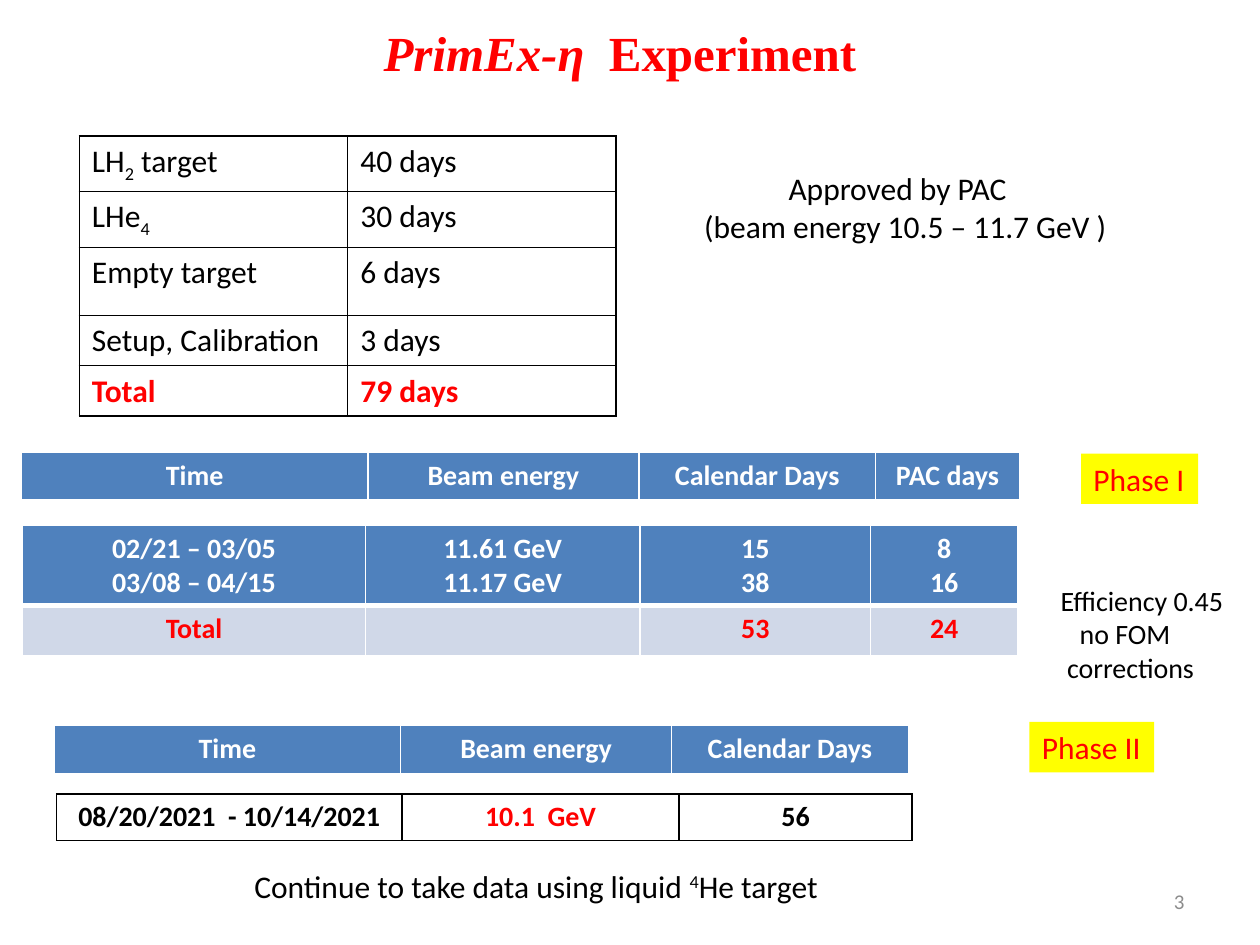
"""Build the experiment run schedule slide."""
from lxml.etree import SubElement as Sub
from pptx import Presentation
from pptx.dml.color import RGBColor
from pptx.enum.text import MSO_ANCHOR as Anchor, PP_ALIGN as Align
from pptx.oxml.ns import qn
from pptx.util import Inches, Pt

rgb = RGBColor.from_string
RED, BLACK, WHITE, BLUE = "FF0000", "000000", "FFFFFF", "4F81BD"
BASES = {"_": "-25000", "^": "30000"}


def write(frame, lines, size, color, bold=False, align=Align.LEFT, face="Calibri"):
    for i, line in enumerate(lines):
        para = frame.paragraphs[0] if i == 0 else frame.add_paragraph()
        para.alignment = align
        for piece in line:
            run = para.add_run()
            run.text = piece.lstrip("_^")
            font = run.font
            font.name, font.size, font.bold = face, Pt(size), bold
            font.color.rgb = rgb(color)
            if piece[:1] in BASES:
                run._r.get_or_add_rPr().set("baseline", BASES[piece[0]])


def grid(left, top, cols, rows, cells, size, edge, align=Align.CENTER):
    frame = slide.shapes.add_table(
        len(rows), len(cols), Inches(left), Inches(top), Inches(sum(cols)), Inches(sum(rows)))
    table = frame.table
    table.first_row = table.horz_banding = False
    for col, width in zip(table.columns, cols):
        col.width = Inches(width)
    for r, (row, (fill, texts)) in enumerate(zip(rows, cells)):
        table.rows[r].height = Inches(row)
        for c, (lines, color, bold) in enumerate(texts):
            cell = table.cell(r, c)
            write(cell.text_frame, lines, size, color, bold, align)
            thick = 3 if edge == WHITE else 1
            sides = {"L": 1, "R": 1, "T": thick if r else 1, "B": 1 if r else thick}
            props = cell._tc.get_or_add_tcPr()
            for side, width in sides.items():
                line = Sub(props, qn("a:ln" + side), w=str(Pt(width)))
                Sub(Sub(line, qn("a:solidFill")), qn("a:srgbClr"), val=edge)
            if fill:
                cell.fill.solid()
                cell.fill.fore_color.rgb = rgb(fill)
            else:
                cell.fill.background()


deck = Presentation()
deck.slide_width, deck.slide_height = Inches(10), Inches(7.5)
slide = deck.slides.add_slide(deck.slide_layouts[6])

title = slide.shapes.add_textbox(Inches(0.67), Inches(0.04), Inches(8.5), Inches(0.75)).text_frame
title.word_wrap = True
title.vertical_anchor = Anchor.MIDDLE
write(title, [["PrimEx-η ", " Experiment"]], 28, RED, True, Align.CENTER, "Times New Roman")
title.paragraphs[0].runs[0].font.italic = True

page = slide.shapes.add_textbox(Inches(7.17), Inches(6.95), Inches(2.33), Inches(0.4)).text_frame
page.word_wrap = True
page.vertical_anchor = Anchor.MIDDLE
write(page, [["3"]], 12, "8C8C8C", align=Align.RIGHT)

plan = [
    (["LH", "_2", " target"], "40 days"),
    (["LHe", "_4"], "30 days"),
    (["Empty target"], "6 days"),
    (["Setup, Calibration"], "3 days"),
    (["Total"], "79 days"),
]
cells = []
for name, days in plan:
    last = name == ["Total"]
    color = RED if last else BLACK
    cells.append((None, [([name], color, last), ([[days]], color, last)]))
grid(0.63, 1.08, [2.13, 2.13], [0.44, 0.44, 0.54, 0.4, 0.4], cells, 18, BLACK, Align.LEFT)

heads = [([[text]], WHITE, True) for text in ("Time", "Beam energy", "Calendar Days", "PAC days")]
widths = [2.75, 2.15, 1.88, 1.14]
for left, top, count in ((0.17, 3.59, 4), (0.43, 5.76, 3)):
    grid(left, top, widths[:count], [0.39], [(BLUE, heads[:count])], 16, WHITE)

runs = [("02/21 – 03/05", "03/08 – 04/15"), ("11.61 GeV", "11.17 GeV"), ("15", "38"), ("8", "16")]
body = [([[one], [two]], WHITE, True) for one, two in runs]
total = [([[text]], RED, True) for text in ("Total", "", "53", "24")]
grid(0.18, 4.17, [2.72, 2.18, 1.83, 1.17], [0.63, 0.39], [(BLUE, body), ("D0D8E8", total)], 16, WHITE)

second = [("08/20/2021  - 10/14/2021", BLACK), ("10.1  GeV", RED), ("56", BLACK)]
row = [([[text]], color, True) for text, color in second]
grid(0.45, 6.3, [2.74, 2.2, 1.85], [0.37], [(WHITE, row)], 16, BLACK)

notes = [
    (8.12, 4.58, 1.71, 0.91, 16, BLACK, None,
     [["Efficiency 0.45"], ["no FOM"], ["corrections"]], [0.2, 0.35, 0.25]),
    (5.43, 1.29, 3.55, 0.71, 18, BLACK, None,
     [["Approved by PAC"], ["(beam energy 10.5 – 11.7 GeV )"]], [0.73, 0.06]),
    (8.58, 3.6, 0.93, 0.4, 18, RED, "FFFF00", [["Phase I"]], [0]),
    (8.17, 5.73, 0.99, 0.4, 18, RED, "FFFF00", [["Phase II"]], [0]),
    (1.92, 6.83, 4.78, 0.4, 18, BLACK, None,
     [["Continue to take data using liquid ", "^4", "He target"]], [0]),
]
for left, top, width, height, size, color, fill, lines, dents in notes:
    box = slide.shapes.add_textbox(Inches(left), Inches(top), Inches(width), Inches(height))
    box.text_frame.word_wrap = False
    write(box.text_frame, lines, size, color)
    for para, dent in zip(box.text_frame.paragraphs, dents):
        para._p.get_or_add_pPr().set("marL", str(Inches(dent)))
    if fill:
        box.fill.solid()
        box.fill.fore_color.rgb = rgb(fill)

deck.save("out.pptx")
